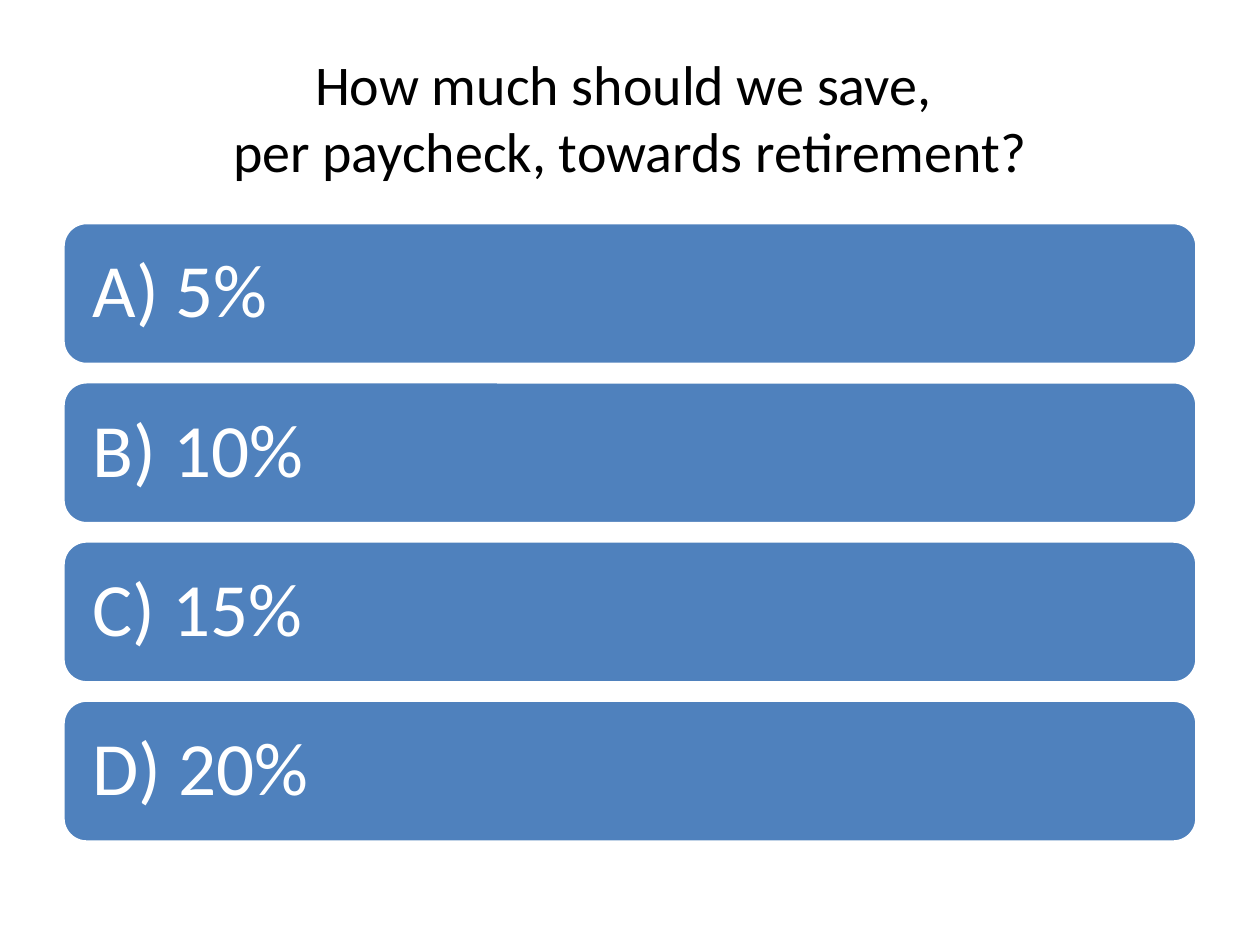
from pptx import Presentation
from pptx.dml.color import RGBColor
from pptx.enum.shapes import MSO_SHAPE
from pptx.enum.text import MSO_ANCHOR, PP_ALIGN
from pptx.util import Pt

TITLE = "How much should we save, \vper paycheck, towards retirement?"
ANSWERS = ["A) 5%", "B) 10%", "C) 15%", "D) 20%"]
LEFT, WIDTH = 36, 648
TITLE_TOP, TITLE_HEIGHT = 21.6, 90
BAR_TOP, BAR_HEIGHT, BAR_GAP = 127.2, 81.1, 9.86
BAR_INSET = 13


def color(value):
    return RGBColor.from_string(value)


def format_text(tf, size, hex_color, align):
    tf.word_wrap = True
    tf.vertical_anchor = MSO_ANCHOR.MIDDLE
    p = tf.paragraphs[0]
    p.alignment = align
    for r in p.runs:
        r.font.name = "Calibri"
        r.font.size = Pt(size)
        r.font.color.rgb = color(hex_color)


def add_title(s):
    title = s.shapes.title
    title.left, title.top = Pt(LEFT), Pt(TITLE_TOP)
    title.width, title.height = Pt(WIDTH), Pt(TITLE_HEIGHT)
    title.text_frame.text = TITLE
    format_text(title.text_frame, 32, "000000", PP_ALIGN.CENTER)


def add_answer(s, index, answer):
    top = BAR_TOP + index * (BAR_HEIGHT + BAR_GAP)
    bar = s.shapes.add_shape(MSO_SHAPE.ROUNDED_RECTANGLE,
                             Pt(LEFT), Pt(top), Pt(WIDTH), Pt(BAR_HEIGHT))
    bar.shadow.inherit = False
    bar.fill.solid()
    bar.fill.fore_color.rgb = color("4F81BD")
    bar.line.color.rgb = color("FFFFFF")
    bar.line.width = Pt(2)
    tf = bar.text_frame
    tf.margin_left = tf.margin_right = Pt(BAR_INSET)
    tf.margin_top = tf.margin_bottom = Pt(BAR_INSET)
    tf.text = answer
    tf.paragraphs[0].line_spacing = 0.9
    format_text(tf, 43, "FFFFFF", PP_ALIGN.LEFT)


def main():
    """Build a quiz slide with a question and four answer bars."""
    prs = Presentation()
    prs.slide_width, prs.slide_height = Pt(720), Pt(540)
    s = prs.slides.add_slide(prs.slide_layouts[5])
    add_title(s)
    for index, answer in enumerate(ANSWERS):
        add_answer(s, index, answer)
    prs.save("out.pptx")


if __name__ == "__main__":
    main()
